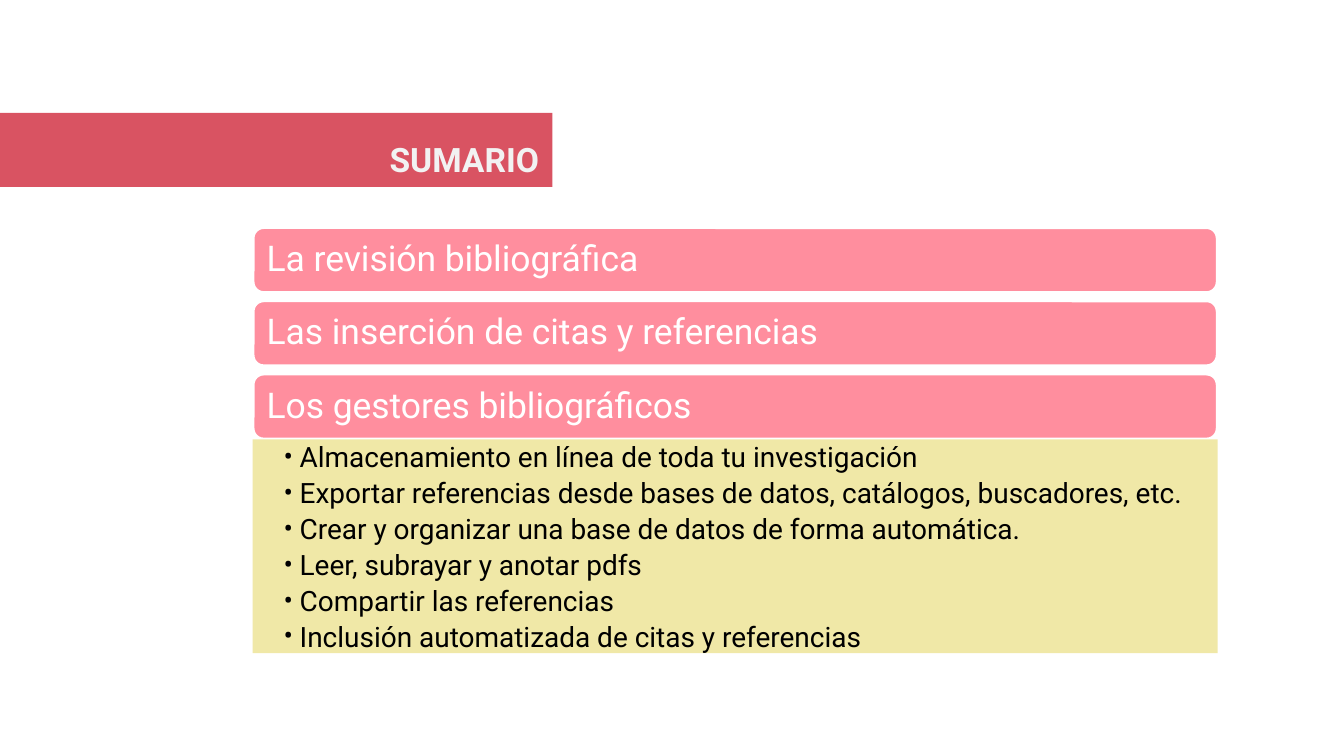
from lxml import etree
from pptx import Presentation
from pptx.dml.color import RGBColor
from pptx.enum.shapes import MSO_SHAPE as SHAPE
from pptx.enum.text import MSO_ANCHOR as ANCHOR, PP_ALIGN as ALIGN
from pptx.oxml.ns import qn
from pptx.util import Inches, Pt

FONT = "Roboto"
TOPICS = [
    "La revisión bibliográfica",
    "Las inserción de citas y referencias",
    "Los gestores bibliográficos",
]
FEATURES = [
    "Almacenamiento en línea de toda tu investigación",
    "Exportar referencias desde bases de datos, catálogos, buscadores, etc.",
    "Crear y organizar una base de datos de forma automática.",
    "Leer, subrayar y anotar pdfs",
    "Compartir las referencias",
    "Inclusión automatizada de citas y referencias",
]


def rgb(value):
    """Turn a hex string into a colour."""
    return RGBColor.from_string(value)


def add_box(slide, kind, box, fill, insets, anchor, line=None):
    """Add a filled shape and return its text frame."""
    s = slide.shapes.add_shape(kind, *[Inches(v) for v in box])
    s.shadow.inherit = False
    s.fill.solid()
    s.fill.fore_color.rgb = rgb(fill)
    if line:
        s.line.color.rgb = rgb(line)
        s.line.width = Pt(2)
    else:
        s.line.fill.background()
    tf = s.text_frame
    tf.word_wrap = True
    tf.vertical_anchor = anchor
    tf.margin_left, tf.margin_top, tf.margin_right, tf.margin_bottom = [
        Inches(v) for v in insets]
    return tf


def write(p, text, size, color, align=ALIGN.LEFT, bold=False):
    """Fill a paragraph with text in one style."""
    p.text = text
    p.alignment = align
    p.font.name = FONT
    p.font.size = Pt(size)
    p.font.bold = bold
    p.font.color.rgb = rgb(color)


def add_bullet(p, indent):
    """Give a paragraph a black hanging bullet."""
    pPr = p._p.get_or_add_pPr()
    pPr.set("marL", str(Inches(indent)))
    pPr.set("indent", str(-Inches(indent)))
    color = etree.Element(qn("a:buClr"))
    etree.SubElement(color, qn("a:srgbClr"), val="000000")
    font = etree.Element(qn("a:buFont"), typeface=FONT)
    char = etree.Element(qn("a:buChar"), char="•")
    pPr.find(qn("a:spcAft")).addnext(color)
    color.addnext(font)
    font.addnext(char)


def add_title(slide, box, text):
    """Draw the title band with right-aligned text."""
    tf = add_box(slide, SHAPE.RECTANGLE, box, "D95362", (0.1, 0.19, 0.1, 0.07), ANCHOR.TOP)
    write(tf.paragraphs[0], text, 18, "F2F2F2", ALIGN.RIGHT, True)


def add_topics(slide, box, topics, bar_height):
    """Spread the topic bars evenly over the box."""
    left, top, width, height = box
    step = (height - bar_height) / (len(topics) - 1)
    for i, topic in enumerate(topics):
        bar = (left, top + i * step, width, bar_height)
        tf = add_box(slide, SHAPE.ROUNDED_RECTANGLE, bar, "FF8E9E", [0.08] * 4,
                     ANCHOR.MIDDLE, "FFFFFF")
        write(tf.paragraphs[0], topic, 19, "FFFFFF")
        tf.paragraphs[0].line_spacing = 0.9


def add_features(slide, box, features):
    """Draw the panel with the bulleted list."""
    tf = add_box(slide, SHAPE.RECTANGLE, box, "F0E8A7", (0.23, 0.03, 0.15, 0.03), ANCHOR.TOP)
    for i, feature in enumerate(features):
        p = tf.add_paragraph() if i else tf.paragraphs[0]
        write(p, feature, 15, "000000")
        p.level = 1
        p.line_spacing = 0.9
        p.space_after = Pt(3)
        add_bullet(p, 0.12)


def main():
    """Build and save the summary slide."""
    prs = Presentation()
    prs.slide_width = Inches(10)
    prs.slide_height = prs.slide_width * 9 // 16
    slide = prs.slides.add_slide(prs.slide_layouts[6])
    add_title(slide, (0, 0.84, 4.11, 0.55), "SUMARIO")
    add_topics(slide, (1.88, 1.69, 7.18, 1.58), TOPICS, 0.49)
    add_features(slide, (1.88, 3.27, 7.18, 1.59), FEATURES)
    prs.save("out.pptx")


if __name__ == "__main__":
    main()
